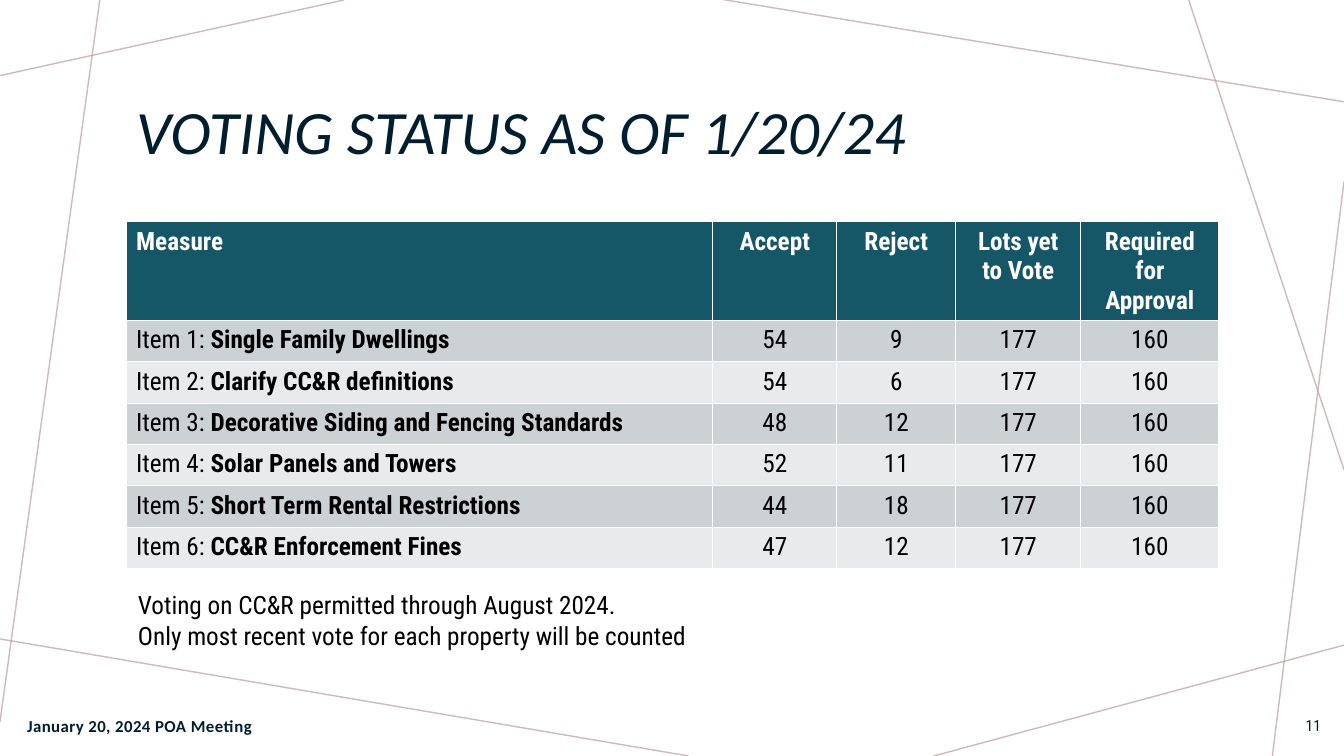
from lxml import etree
from pptx import Presentation
from pptx import util as u
from pptx.dml.color import RGBColor
from pptx.enum import shapes, text
from pptx.oxml.ns import qn

COLORS = {
    "ink": "001E2E",
    "black": "000000",
    "white": "FFFFFF",
    "teal": "155767",
    "band_dark": "CCD1D3",
    "band_light": "E8EAEB",
    "rose": "BA9CA0",
}
LEFT, CENTER, RIGHT = text.PP_ALIGN.LEFT, text.PP_ALIGN.CENTER, text.PP_ALIGN.RIGHT
TOP, MIDDLE = text.MSO_ANCHOR.TOP, text.MSO_ANCHOR.MIDDLE

BACKGROUND_LINES = [
    (3.41, 0, 0, 0.75),
    (0.99, 0, 0, 7.16),
    (6.83, 7.5, -0.05, 6.33),
    (13.33, 6.4, 9.26, 7.5),
    (13.33, 1.8, 12.62, 7.5),
    (13.33, 4.66, 11.79, 0),
    (13.33, 1.01, 7.14, -0.01),
]
HEADINGS = ["Measure", "Accept", "Reject", "Lots yet to Vote", "Required for Approval"]
COLUMN_WIDTHS = [5.82, 1.23, 1.18, 1.24, 1.37]
HEADER_HEIGHT, ROW_HEIGHT = 0.98, 0.41
LOTS_YET_TO_VOTE, REQUIRED = 177, 160
VOTES = [
    ("Single Family Dwellings", 54, 9),
    ("Clarify CC&R definitions", 54, 6),
    ("Decorative Siding and Fencing Standards", 48, 12),
    ("Solar Panels and Towers", 52, 11),
    ("Short Term Rental Restrictions", 44, 18),
    ("CC&R Enforcement Fines", 47, 12),
]


def rgb(name):
    return RGBColor.from_string(COLORS[name])


class VotingSlide:
    heading_font = "Calibri"
    body_font = "Roboto Condensed"

    def __init__(self, deck):
        self.page = deck.slides.add_slide(deck.slide_layouts[5])

    def fill_para(self, para, pieces, color="black", align=LEFT, **formats):
        para.alignment = align
        values = {"name": self.body_font, "size": u.Pt(18), "bold": False, **formats}
        for words, extra in pieces:
            span = para.add_run()
            span.text = words
            for key, value in {**values, **extra}.items():
                setattr(span.font, key, value)
            span.font.color.rgb = rgb(color)

    def line(self, *ends):
        line = self.page.shapes.add_connector(
            shapes.MSO_CONNECTOR.STRAIGHT, *map(u.Inches, ends))
        line.line.width = u.Pt(1)
        line.line.color.rgb = rgb("rose")
        properties = line._element.spPr
        tint = next(properties.iter(qn("a:srgbClr")))
        etree.SubElement(tint, qn("a:alpha"), val="70000")
        etree.SubElement(properties, qn("a:effectLst"))

    def title(self, words, area):
        title = self.page.shapes.title
        for key, value in zip(("left", "top", "width", "height"), area):
            setattr(title, key, u.Inches(value))
        title.text_frame.auto_size = text.MSO_AUTO_SIZE.NONE
        title.text_frame.vertical_anchor = MIDDLE
        para = title.text_frame.paragraphs[0]
        para.line_spacing = 0.9
        self.fill_para(para, [(words, {})], "ink", name=self.heading_font,
                       size=u.Pt(44), italic=True)

    def note(self, lines, area, anchor=TOP, spacing=0, **formats):
        box = self.page.shapes.add_textbox(*map(u.Inches, area))
        frame = box.text_frame
        frame.word_wrap = True
        frame.vertical_anchor = anchor
        for index, words in enumerate(lines):
            para = frame.add_paragraph() if index else frame.paragraphs[0]
            self.fill_para(para, [(words, {})], **formats)
            if spacing:
                para.runs[0].font._element.set("spc", str(spacing))

    def cell(self, cell, pieces, fill, **formats):
        cell.fill.solid()
        cell.fill.fore_color.rgb = rgb(fill)
        self.fill_para(cell.text_frame.paragraphs[0], pieces, **formats)

    def votes(self, left, top):
        height = HEADER_HEIGHT + ROW_HEIGHT * len(VOTES)
        area = map(u.Inches, (left, top, sum(COLUMN_WIDTHS), height))
        table = self.page.shapes.add_table(len(VOTES) + 1, len(HEADINGS), *area).table
        for column, width in zip(table.columns, COLUMN_WIDTHS):
            column.width = u.Inches(width)
        for index, row in enumerate(table.rows):
            row.height = u.Inches(ROW_HEIGHT if index else HEADER_HEIGHT)
        for column, heading in enumerate(HEADINGS):
            self.cell(table.cell(0, column), [(heading, {})], "teal", color="white",
                      align=CENTER if column else LEFT, bold=True)
        for item, (measure, accept, reject) in enumerate(VOTES, 1):
            fill = "band_dark" if item % 2 else "band_light"
            self.cell(table.cell(item, 0),
                      [(f"Item {item}: ", {}), (measure, {"bold": True})], fill)
            counts = (accept, reject, LOTS_YET_TO_VOTE, REQUIRED)
            for column, count in enumerate(counts, 1):
                self.cell(table.cell(item, column), [(str(count), {})], fill, align=CENTER)


def main():
    deck = Presentation()
    deck.slide_width, deck.slide_height = u.Inches(13.33), u.Inches(7.5)
    slide = VotingSlide(deck)
    for ends in BACKGROUND_LINES:
        slide.line(*ends)
    slide.title("VOTING STATUS AS OF 1/20/24", (1.25, 0.58, 10.83, 1.51))
    slide.votes(1.25, 2.2)
    slide.note(["11"], (12.69, 7, 0.51, 0.4), MIDDLE, color="ink", align=RIGHT,
               size=u.Pt(11))
    slide.note(["Voting on CC&R permitted through August 2024.",
                "Only most recent vote for each property will be counted"],
               (1.27, 5.8, 5.74, 0.71))
    slide.note(["January 20, 2024 POA Meeting"], (0.17, 7, 4.92, 0.4), MIDDLE, 30,
               color="ink", name=slide.heading_font, size=u.Pt(12), bold=True)
    deck.save("out.pptx")


if __name__ == "__main__":
    main()
